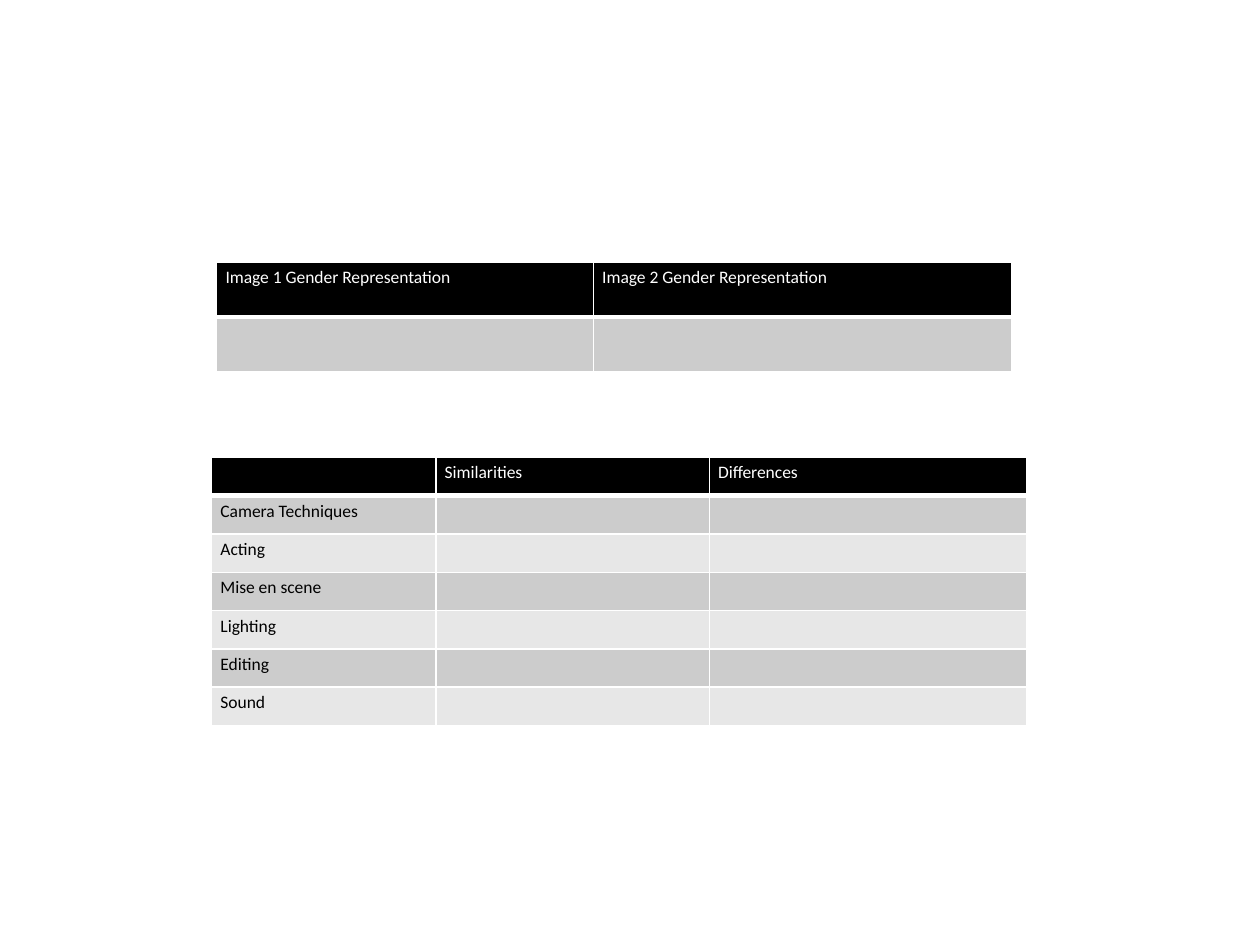
from dataclasses import dataclass

from lxml.etree import SubElement
from pptx import Presentation
from pptx.dml.color import RGBColor
from pptx.oxml.ns import qn
from pptx.slide import Slide
from pptx.table import _Cell
from pptx.util import Inches, Pt

BLACK, WHITE = "000000", "FFFFFF"
BAND_FILLS = ("CCCCCC", "E7E7E7")
FONT_SIZE = 10


@dataclass
class Grid:
    """A banded table with a black header row."""
    left: float
    top: float
    height: float
    column_widths: list[float]
    rows: list[list[str]]


GRIDS = [
    Grid(1.68, 3.63, 2.13, [1.78, 2.17, 2.52],
         [["", "Similarities", "Differences"]]
         + [[aspect, "", ""] for aspect in (
             "Camera Techniques", "Acting", "Mise en scene",
             "Lighting", "Editing", "Sound")]),
    Grid(1.72, 2.08, 0.87, [2.99, 3.32],
         [["Image 1 Gender Representation", "Image 2 Gender Representation"],
          ["", ""]]),
]


def color(value: str) -> RGBColor:
    """Return the colour for a hex string."""
    return RGBColor.from_string(value)


def add_borders(cell: _Cell, bottom_width: float) -> None:
    """Draw white lines on all four sides of a cell."""
    properties = cell._tc.get_or_add_tcPr()
    for side, width in (("L", 1), ("R", 1), ("T", 1), ("B", bottom_width)):
        line = SubElement(properties, qn(f"a:ln{side}"), w=str(Pt(width)))
        fill = SubElement(line, qn("a:solidFill"))
        SubElement(fill, qn("a:srgbClr"), val=WHITE)


def format_cell(cell: _Cell, text: str, row_index: int) -> None:
    """Write and style one cell according to its row."""
    is_header = row_index == 0
    add_borders(cell, 3 if is_header else 1)
    cell.fill.solid()
    cell.fill.fore_color.rgb = color(
        BLACK if is_header else BAND_FILLS[(row_index - 1) % 2])
    cell.margin_left = cell.margin_right = Inches(0.07)
    cell.margin_top = cell.margin_bottom = Inches(0.04)
    cell.text = text
    paragraph = cell.text_frame.paragraphs[0]
    font = paragraph.font
    font.name = "Calibri"
    font.size = Pt(FONT_SIZE)
    font.bold = False
    font.color.rgb = color(WHITE if is_header else BLACK)
    if not text:
        SubElement(paragraph._p, qn("a:endParaRPr"), sz=str(FONT_SIZE * 100))


def add_grid(slide: Slide, grid: Grid) -> None:
    """Add one table with equal row heights."""
    table = slide.shapes.add_table(
        len(grid.rows), len(grid.column_widths), Inches(grid.left),
        Inches(grid.top), Inches(sum(grid.column_widths)),
        Inches(grid.height)).table
    for column, width in zip(table.columns, grid.column_widths):
        column.width = Inches(width)
    for row_index, texts in enumerate(grid.rows):
        for column_index, text in enumerate(texts):
            format_cell(table.cell(row_index, column_index), text, row_index)


def main() -> None:
    """Build the slide with both comparison tables."""
    presentation = Presentation()
    presentation.slide_width = Inches(10)
    presentation.slide_height = Inches(7.5)
    slide = presentation.slides.add_slide(presentation.slide_layouts[6])
    for grid in GRIDS:
        add_grid(slide, grid)
    presentation.save("out.pptx")


if __name__ == "__main__":
    main()
